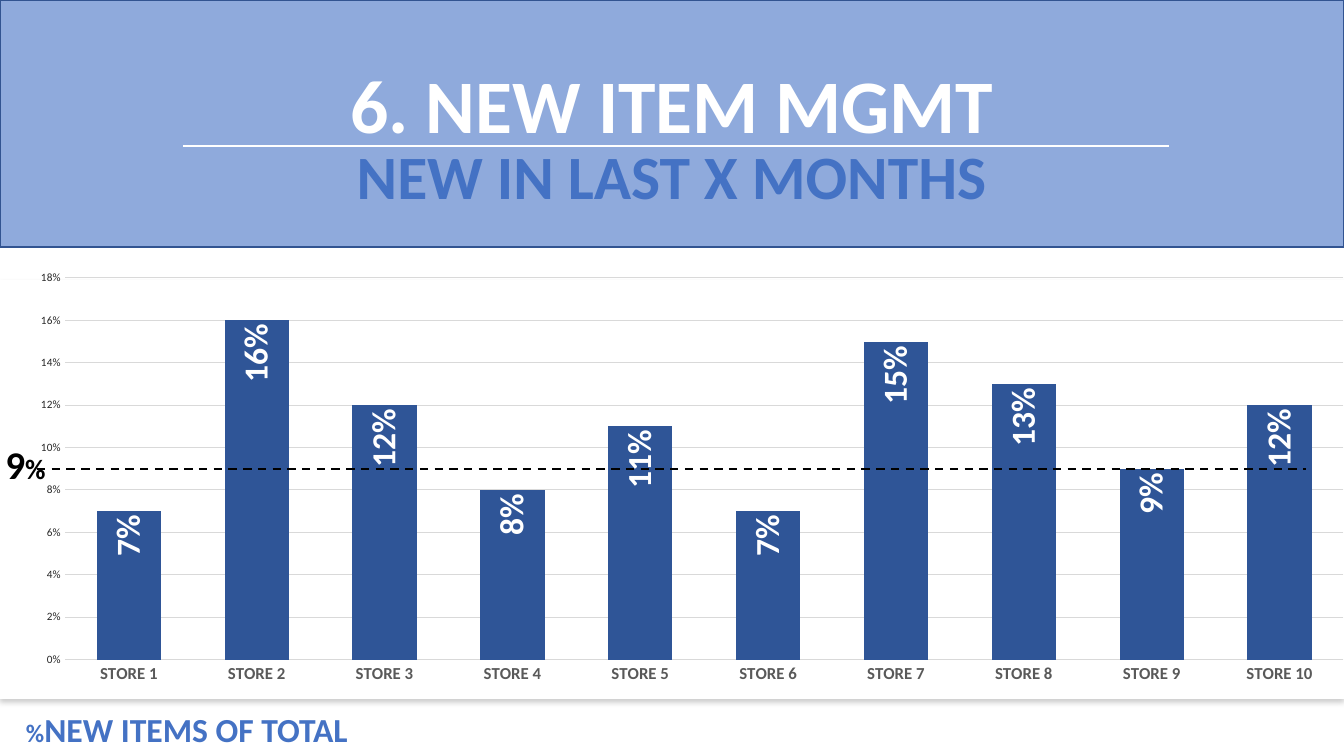
from lxml import etree
from pptx import Presentation
from pptx.chart.data import CategoryChartData
from pptx.dml.color import RGBColor
from pptx.enum.chart import XL_CHART_TYPE, XL_LABEL_POSITION, XL_TICK_MARK
from pptx.enum.dml import MSO_LINE
from pptx.enum.shapes import MSO_CONNECTOR, MSO_SHAPE
from pptx.enum.text import MSO_ANCHOR, PP_ALIGN
from pptx.oxml import parse_xml
from pptx.oxml.ns import nsdecls, qn
from pptx.util import Pt

COLUMNS = XL_CHART_TYPE.COLUMN_CLUSTERED
INSIDE_END = XL_LABEL_POSITION.INSIDE_END
NO_TICK = XL_TICK_MARK.NONE
DASH = MSO_LINE.DASH
STRAIGHT = MSO_CONNECTOR.STRAIGHT
RECTANGLE = MSO_SHAPE.RECTANGLE
TOP = MSO_ANCHOR.TOP
LEFT, CENTER = PP_ALIGN.LEFT, PP_ALIGN.CENTER

EMU_PER_PX = 914400 / 100.8
PAGE_WIDTH, PAGE_HEIGHT = 1344, 756
TITLE_ONLY = 5
FONT = "Calibri"
COLORS = {
    "white": "FFFFFF",
    "black": "000000",
    "banner": "8FAADC",
    "banner edge": "325491",
    "accent": "4472C4",
    "column": "2F5597",
    "grid": "D9D9D9",
    "store": "595959",
    "scale": "262626",
}
STORE_SHARES = [0.07, 0.16, 0.12, 0.08, 0.11, 0.07, 0.15, 0.13, 0.09, 0.12]


def px(length):
    return round(length * EMU_PER_PX)


def color(name):
    return RGBColor.from_string(COLORS[name])


def style_font(font, size, name, bold=False):
    font.name = FONT
    font.size = Pt(size)
    font.bold = bold
    font.color.rgb = color(name)


def write(shape, spans, name, align=LEFT, inset=None):
    """Fill a shape with one bold paragraph of (text, size) spans."""
    frame = shape.text_frame
    frame.word_wrap = True
    frame.vertical_anchor = TOP
    if inset is not None:
        frame.margin_left = frame.margin_right = px(inset)
        frame.margin_top = frame.margin_bottom = px(inset)
    para = frame.paragraphs[0]
    para.alignment = align
    for text, size in spans:
        span = para.add_run()
        span.text = text
        style_font(span.font, size, name, bold=True)
    return para


def add_text(page, box, spans, name, align=LEFT, inset=None):
    shape = page.shapes.add_textbox(*map(px, box))
    return write(shape, spans, name, align, inset)


def add_rectangle(page, box, fill):
    shape = page.shapes.add_shape(RECTANGLE, *map(px, box))
    shape.shadow.inherit = False
    shape.fill.solid()
    shape.fill.fore_color.rgb = color(fill)
    return shape


def add_rule(page, left, right, y, name):
    rule = page.shapes.add_connector(STRAIGHT, px(left), px(y), px(right), px(y))
    rule.line.color.rgb = color(name)
    rule.line.width = Pt(1.5)
    etree.SubElement(rule.element.spPr, qn("a:effectLst"))
    return rule


def add_banner(page, box):
    left, top, width, height = box
    banner = add_rectangle(page, box, "banner")
    banner.line.color.rgb = color("banner edge")
    banner.line.width = Pt(1)

    title = page.shapes.title
    title.left, title.top = px(left), px(top + 53)
    title.width, title.height = px(width), px(102)
    title.element.addprevious(banner.element)
    para = write(title, [("6. NEW ITEM MGMT", 54)], "white", CENTER)
    para.line_spacing = 1.0
    para.space_before = Pt(0)

    add_text(page, (left, top + 133, width, 85),
             [("NEW IN LAST X MONTHS", 44)], "accent", CENTER)
    add_rule(page, left + 183, left + 1169, top + 146, "white")


def add_panel(page, box):
    """Place the white card with a soft shadow below it."""
    panel = add_rectangle(page, box, "white")
    panel.line.fill.background()
    effects = panel.element.spPr.find(qn("a:effectLst"))
    effects.append(parse_xml(
        f'<a:outerShdw {nsdecls("a")} blurRad="{Pt(4)}" dist="{Pt(3)}" '
        'dir="5400000" algn="t" rotWithShape="0">'
        f'<a:srgbClr val="{COLORS["black"]}"><a:alpha val="20000"/></a:srgbClr>'
        '</a:outerShdw>'))


def set_plot_area(chart, x, y, width, height):
    plot_area = chart.element.find(".//" + qn("c:plotArea"))
    for old_layout in plot_area.findall(qn("c:layout")):
        plot_area.remove(old_layout)
    plot_area.insert(0, parse_xml(
        f'<c:layout {nsdecls("c")}><c:manualLayout>'
        '<c:layoutTarget val="inner"/>'
        '<c:xMode val="edge"/><c:yMode val="edge"/>'
        f'<c:x val="{x}"/><c:y val="{y}"/><c:w val="{width}"/><c:h val="{height}"/>'
        '</c:manualLayout></c:layout>'))


def style_axes(chart):
    stores, scale = chart.category_axis, chart.value_axis
    for axis in (stores, scale):
        axis.major_tick_mark = axis.minor_tick_mark = NO_TICK
    style_font(stores.tick_labels.font, 12, "store", bold=True)
    style_font(scale.tick_labels.font, 8, "scale")
    scale.minimum_scale, scale.maximum_scale, scale.major_unit = 0, 0.18, 0.02
    scale.tick_labels.number_format = "0%"
    scale.tick_labels.number_format_is_linked = False
    scale.format.line.fill.background()
    for line in (stores.format.line, scale.major_gridlines.format.line):
        line.color.rgb = color("grid")
        line.width = Pt(0.75)


def style_columns(plot):
    plot.gap_width = 99
    plot.vary_by_categories = False
    series = plot.series[0]
    series.format.fill.solid()
    series.format.fill.fore_color.rgb = color("column")
    labels = series.data_labels
    style_font(labels.font, 24, "white", bold=True)
    labels.show_value = True
    labels.position = INSIDE_END
    labels.number_format = "0%"
    labels.number_format_is_linked = False
    label_body = plot.series[0].data_labels._element.find(".//" + qn("a:bodyPr"))
    label_body.set("rot", "-5400000")
    label_body.set("vert", "horz")


def add_store_chart(page, box):
    data = CategoryChartData(number_format="0%")
    data.categories = [f"STORE {number}" for number in range(1, len(STORE_SHARES) + 1)]
    data.add_series("Series 1", STORE_SHARES)
    chart = page.shapes.add_chart(COLUMNS, *map(px, box), data).chart
    chart.has_title = False
    chart.has_legend = False
    style_font(chart.font, 10, "black")
    set_plot_area(chart, 0.039, 0.019, 0.961, 0.911)
    style_axes(chart)
    style_columns(chart.plots[0])


def add_average(page, box):
    """Place the dashed average line with its value at the left end."""
    left, top, width, height = box
    rule = add_rule(page, left + 72, left + width, top + 23, "black")
    rule.line.dash_style = DASH
    para = add_text(page, (left, top, 121, height),
                    [("9", 28), ("%", 20)], "black", CENTER, inset=0)
    para.line_spacing = 0.9


def main():
    deck = Presentation()
    deck.slide_width, deck.slide_height = px(PAGE_WIDTH), px(PAGE_HEIGHT)
    page = deck.slides.add_slide(deck.slide_layouts[TITLE_ONLY])
    add_banner(page, (0, 0, PAGE_WIDTH, 247))
    add_panel(page, (0, 280, PAGE_WIDTH, 419))
    add_store_chart(page, (13, 270, PAGE_WIDTH - 13, 419))
    add_text(page, (26, 709, 954, 40),
             [("%", 18), ("NEW ITEMS OF TOTAL", 24)], "accent", inset=0)
    add_average(page, (-35, 446, 1341, 42))
    deck.save("out.pptx")


if __name__ == "__main__":
    main()
